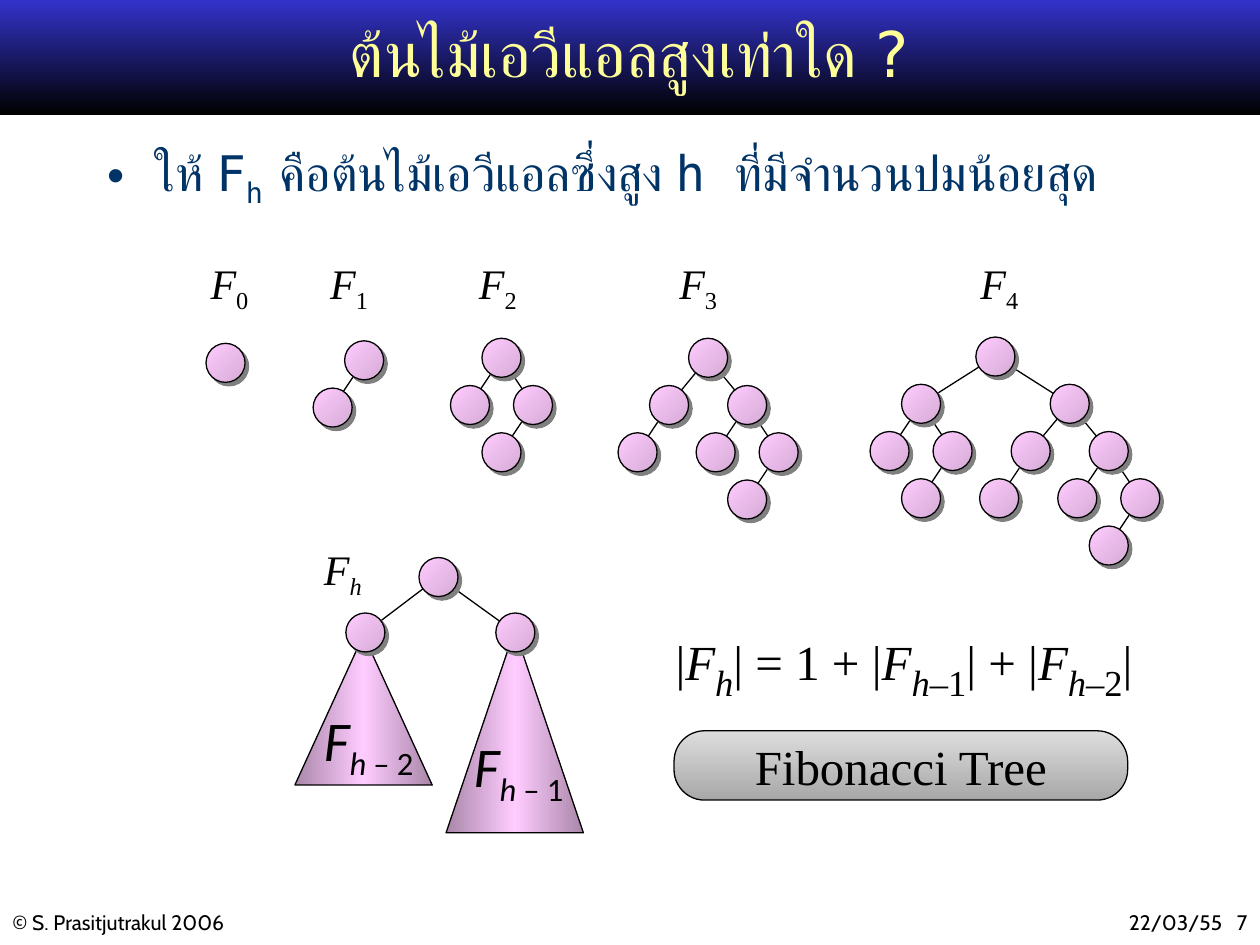
from dataclasses import dataclass
from pptx import Presentation, util as u
from pptx.dml.color import RGBColor
from pptx.enum import shapes, text
from pptx.oxml import parse_xml
from pptx.oxml.ns import nsdecls, qn


@dataclass(frozen=True)
class Theme:
    ink: str = "000000"
    title: str = "FFFF99"
    body: str = "003366"
    shadow: str = "808080"
    band: tuple = ("3333CC", "000000")
    node: tuple = ("FFCCFF", "D5ABD5")
    subtree: tuple = ("A987A9", "FFCCFF", "A987A9")
    button: tuple = ("DDDDDD", "A8A8A8")
    thai: str = "DejaVu Sans Mono"
    serif: str = "Times New Roman"
    sans: str = "Calibri"
    footer: str = "Cabin"
    title_size: int = 36
    body_size: int = 28
    label_size: int = 24
    subtree_size: int = 32
    index_size: int = 36
    footer_size: int = 12
    line: float = 0.75


THEME = Theme()
WIDTH, HEIGHT = 10, 7.5
NODE = 0.31                                   # node diameter
LEVEL = 0.375                                 # drop from parent to child
SPREAD = {1: 0.25, 2: 0.25, 3: 0.31, 4: 0.59}  # sideways step by tree height
LABEL_TOP, LABEL_WIDTH, LABEL_HEIGHT = 2.04, 0.75, 0.36

# Content: a run is (words, style letters), i = italic, s = subscript
TITLE = "ต้นไม้เอวีแอลสูงเท่าใด ?"
BODY = [("ให้ F", ""), ("h ", "s"), ("คือต้นไม้เอวีแอลซึ่งสูง h ที่มีจำนวนปมน้อยสุด", "")]
TREES = [  # height, root centre, label left
    (0, (1.79, 2.88), 1.47),
    (1, (2.89, 2.86), 2.42),
    (2, (3.98, 2.84), 3.6),
    (3, (5.62, 2.84), 5.19),
    (4, (7.9, 2.83), 7.58),
]
GENERAL_ROOT = (3.48, 4.58)
GENERAL_LABEL = ([("F", "i"), ("h ", "is")], (2.37, 4.31))
SUBTREES = [  # child centre, triangle box, index, label position
    ((2.9, 5.02), (2.34, 5.04, 1.09, 1.19), " – 2 ", (2.55, 5.6)),
    ((4.09, 5.02), (3.54, 5, 1.09, 1.61), " – 1 ", (3.74, 5.81)),
]
FORMULA = [("|", ""), ("F", "i"), ("h", "is"), ("| = 1 + |", ""), ("F", "i"), ("h–", "is"),
           ("1", "s"), ("| + |", ""), ("F", "i"), ("h–", "is"), ("2", "s"), ("|", "")]
FOOTERS = [  # words, left, width, alignment
    ("© S. Prasitjutrakul 2006", 0, 3.25, text.PP_ALIGN.LEFT),
    ("22/03/55", 7.83, 1.97, text.PP_ALIGN.RIGHT),
    ("7", 9.5, 0.5, text.PP_ALIGN.RIGHT),
]


def inches(*lengths):
    return [u.Inches(length) for length in lengths]


def set_attributes(target, **values):
    for name, value in values.items():
        setattr(target, name, value)


def write(shape, runs, font, size, color=THEME.ink, align=text.PP_ALIGN.CENTER,
          index_size=None, inset=None, **frame_format):
    frame = shape.text_frame
    set_attributes(frame, **{"word_wrap": True, "auto_size": text.MSO_AUTO_SIZE.NONE,
                             **frame_format})
    if inset is not None:
        set_attributes(frame, margin_left=inset, margin_right=inset,
                       margin_top=inset, margin_bottom=inset)
    paragraph = frame.paragraphs[0]
    set_attributes(paragraph, alignment=align, space_before=u.Pt(0))
    for words, style in runs:
        run = paragraph.add_run()
        run.text = words
        low = "s" in style
        set_attributes(run.font, name=font, italic="i" in style,
                       size=u.Pt(index_size if low and index_size else size))
        run.font.color.rgb = RGBColor.from_string(color)
        if low:
            run.font._element.set("baseline", "-25000")
    return paragraph


def add_text(slide, box, runs, font, size, **options):
    return write(slide.shapes.add_textbox(*inches(*box)), runs, font, size, **options)


def add_label(slide, runs, position, font=THEME.serif, size=THEME.label_size):
    add_text(slide, (*position, LABEL_WIDTH, LABEL_HEIGHT), runs, font, size, inset=0)


def set_line(line):
    line.color.rgb = RGBColor.from_string(THEME.ink)
    line.width = u.Pt(THEME.line)


def add_gradient_shape(slide, kind, box, colors, angle, outline=True):
    shape = slide.shapes.add_shape(kind, *inches(*box))
    shape.shadow.inherit = False
    shape.fill.background()
    stops = "".join(
        f'<a:gs pos="{100000 * i // (len(colors) - 1)}"><a:srgbClr val="{color}"/></a:gs>'
        for i, color in enumerate(colors))
    properties = shape._element.spPr
    properties.replace(properties.find(qn("a:noFill")), parse_xml(
        f'<a:gradFill {nsdecls("a")} rotWithShape="1"><a:gsLst>{stops}</a:gsLst>'
        f'<a:lin ang="{angle * 60000}" scaled="0"/></a:gradFill>'))
    if outline:
        set_line(shape.line)
    else:
        shape.line.fill.background()
    return shape


def add_node(slide, center):
    x, y = center
    node = add_gradient_shape(slide, shapes.MSO_SHAPE.OVAL,
                              (x - NODE / 2, y - NODE / 2, NODE, NODE), THEME.node, 45)
    node._element.spPr.find(qn("a:effectLst")).append(parse_xml(
        f'<a:outerShdw {nsdecls("a")} blurRad="0" dist="{u.Pt(2.8)}" dir="2700000" '
        f'algn="ctr" rotWithShape="0"><a:srgbClr val="{THEME.shadow}"/></a:outerShdw>'))


def add_edge(slide, start, end):
    edge = slide.shapes.add_connector(shapes.MSO_CONNECTOR.STRAIGHT, *inches(*start, *end))
    set_line(edge.line)
    edge._element.spPr.append(parse_xml(f'<a:effectLst {nsdecls("a")}/>'))


def fibonacci_tree(height, root):
    """Nodes and edges: F(h-2) hangs on the left and F(h-1) on the right."""
    nodes, edges = [root], []
    children = {0: [], 1: [(-1, 0)]}.get(height, [(-1, height - 2), (1, height - 1)])
    for side, child_height in children:
        child = (root[0] + side * SPREAD[height], root[1] + LEVEL)
        child_nodes, child_edges = fibonacci_tree(child_height, child)
        nodes += child_nodes
        edges += [(root, child)] + child_edges
    return nodes, edges


def main():
    presentation = Presentation()
    presentation.slide_width, presentation.slide_height = inches(WIDTH, HEIGHT)
    slide = presentation.slides.add_slide(presentation.slide_layouts[1])
    title, body = slide.placeholders

    # Title band, behind the title
    band = add_gradient_shape(slide, shapes.MSO_SHAPE.RECTANGLE, (0, 0, WIDTH, 0.91),
                              THEME.band, 90, outline=False)
    slide.shapes._spTree.insert(2, band._element)

    # Title and bullet
    for holder, box in ((title, (0.75, 0, 8.5, 0.83)), (body, (0.75, 1.08, 8.99, 5.58))):
        set_attributes(holder, **dict(zip(("left", "top", "width", "height"), inches(*box))))
    write(title, [(TITLE, "")], THEME.thai, THEME.title_size, THEME.title,
          vertical_anchor=text.MSO_ANCHOR.MIDDLE)
    bullet = write(body, BODY, THEME.thai, THEME.body_size, THEME.body,
                   align=text.PP_ALIGN.LEFT)
    properties = bullet._p.get_or_add_pPr()
    properties.set("marL", str(u.Inches(0.38)))
    properties.set("indent", str(-u.Inches(0.38)))
    properties.append(parse_xml(
        f'<a:buClr {nsdecls("a")}><a:srgbClr val="{THEME.body}"/></a:buClr>'))
    properties.append(parse_xml(f'<a:buChar {nsdecls("a")} char="•"/>'))

    # Trees F0 to F4
    for height, root, label_left in TREES:
        nodes, edges = fibonacci_tree(height, root)
        for edge in edges:
            add_edge(slide, *edge)
        for node in nodes:
            add_node(slide, node)
        add_label(slide, [("F", "i"), (f"{height} ", "s")], (label_left, LABEL_TOP))

    # General tree Fh
    for child, *_ in SUBTREES:
        add_edge(slide, GENERAL_ROOT, child)
    add_node(slide, GENERAL_ROOT)
    for child, triangle, index, position in SUBTREES:
        add_gradient_shape(slide, shapes.MSO_SHAPE.ISOSCELES_TRIANGLE, triangle,
                           THEME.subtree, 0)
        add_node(slide, child)
        add_label(slide, [("F", "i"), ("h", "is"), (index, "s")], position,
                  THEME.sans, THEME.subtree_size)
    add_label(slide, *GENERAL_LABEL)

    # Recurrence and name
    add_text(slide, (4.89, 4.85, 4.57, 0.57), FORMULA, THEME.serif, THEME.body_size,
             index_size=THEME.index_size)
    button = add_gradient_shape(slide, shapes.MSO_SHAPE.ROUNDED_RECTANGLE,
                                (5.35, 5.8, 3.6, 0.55), THEME.button, 90)
    button.adjustments[0] = 0.44
    write(button, [("Fibonacci Tree", "")], THEME.serif, THEME.body_size,
          word_wrap=False, vertical_anchor=text.MSO_ANCHOR.MIDDLE)

    # Footer
    for words, left, width, align in FOOTERS:
        add_text(slide, (left, 7.17, width, 0.3), [(words, "")], THEME.footer,
                 THEME.footer_size, align=align)

    presentation.save("out.pptx")


if __name__ == "__main__":
    main()
